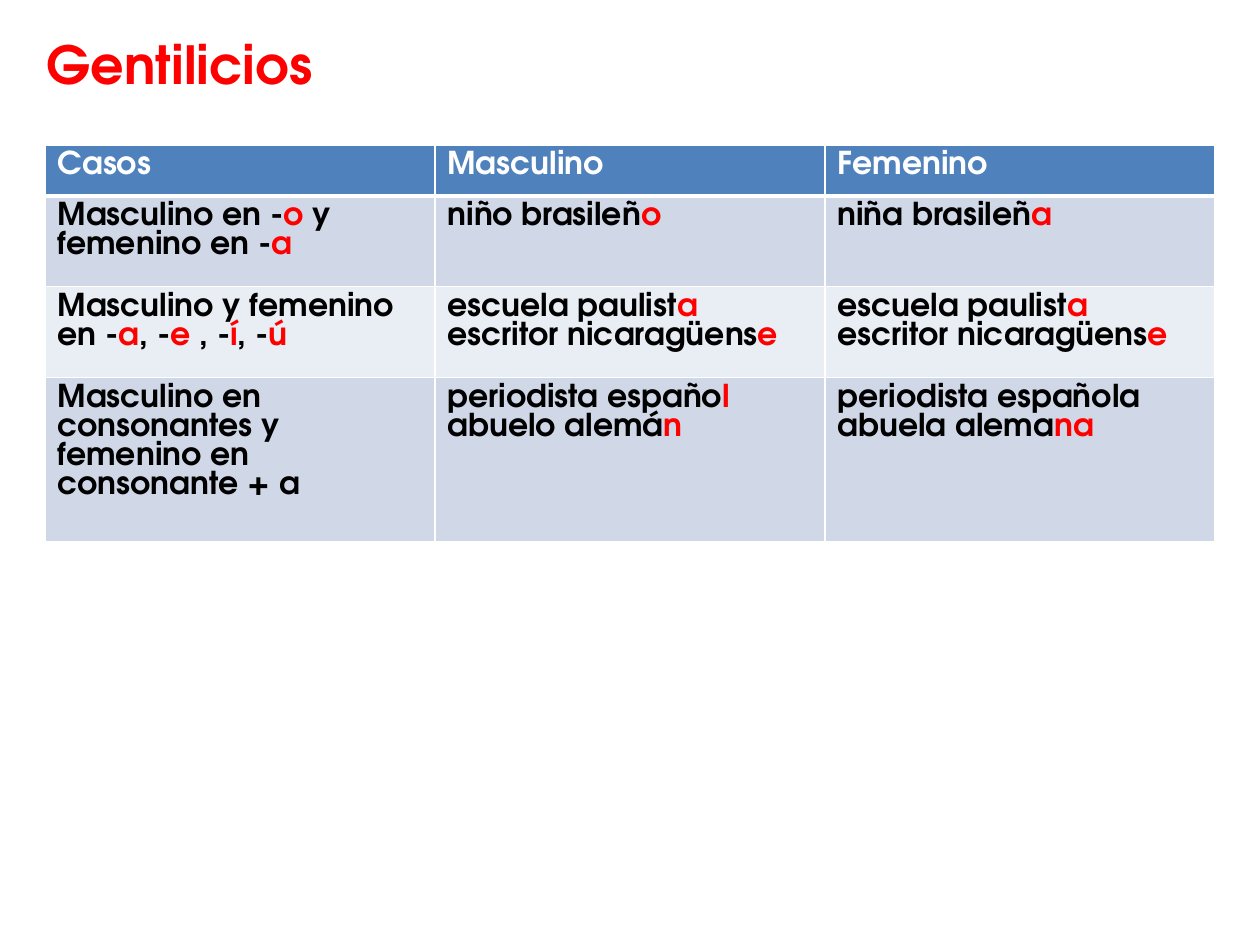
from lxml.etree import SubElement
from pptx import Presentation
from pptx.dml.color import RGBColor
from pptx.enum.text import MSO_AUTO_SIZE
from pptx.oxml.ns import qn
from pptx.util import Cm, Pt

COLORS = {
    "accent": "FF0000",
    "text": "000000",
    "header_text": "FFFFFF",
    "border": "FFFFFF",
    "header": "4F81BD",
    "odd_row": "D0D8E8",
    "even_row": "E9EDF4",
}
FONT = "TeX Gyre Adventor"
TITLE_FORMAT = {"name": FONT, "size": Pt(30), "bold": True}
CELL_FORMAT = {"name": FONT, "size": Pt(18), "bold": True}
ROW_HEIGHTS = [1.02, 1.83, 1.83, 3.29]
COLUMN_WIDTH = 7.86

# Asterisks enclose the highlighted endings; a line break starts a paragraph.
ROWS = [
    ["Casos", "Masculino", "Femenino"],
    ["Masculino en -*o *y femenino en -*a*", "niño brasileñ*o*", "niña brasileñ*a*"],
    ["Masculino y femenino en -*a*, -*e *, -*í*, -*ú*"]
    + ["escuela paulist*a*\nescritor nicaragüens*e*"] * 2,
    ["Masculino en consonantes y femenino en consonante + a",
     "periodista españo*l*\nabuelo alemá*n*",
     "periodista española\nabuela alema*na*"],
]


def color(name):
    return RGBColor.from_string(COLORS[name])


def add_run(paragraph, text, font_format, color_name):
    run = paragraph.add_run()
    run.text = text
    for attribute, value in font_format.items():
        setattr(run.font, attribute, value)
    run.font.color.rgb = color(color_name)


def add_title(slide, text):
    shape = slide.shapes.add_textbox(Cm(0.69), Cm(0.53), Cm(23.8), Cm(1.55))
    frame = shape.text_frame
    frame.word_wrap = True
    frame.auto_size = MSO_AUTO_SIZE.SHAPE_TO_FIT_TEXT
    add_run(frame.paragraphs[0], text, TITLE_FORMAT, "accent")


def set_borders(cell, widths):
    """Draw cell borders; widths maps L, R, T and B to points, in that order."""
    properties = cell._tc.get_or_add_tcPr()
    for side, width in widths.items():
        line = SubElement(properties, qn(f"a:ln{side}"), w=str(Pt(width)))
        fill = SubElement(line, qn("a:solidFill"))
        SubElement(fill, qn("a:srgbClr"), val=COLORS["border"])


def fill_cell(cell, text, fill_name, text_color):
    cell.fill.solid()
    cell.fill.fore_color.rgb = color(fill_name)
    frame = cell.text_frame
    for index, line in enumerate(text.split("\n")):
        paragraph = frame.add_paragraph() if index else frame.paragraphs[0]
        for position, part in enumerate(line.split("*")):
            if part:
                add_run(paragraph, part, CELL_FORMAT,
                        "accent" if position % 2 else text_color)


def add_endings_table(slide):
    columns = len(ROWS[0])
    table = slide.shapes.add_table(
        len(ROWS), columns, Cm(0.91), Cm(2.93),
        Cm(COLUMN_WIDTH * columns), Cm(sum(ROW_HEIGHTS))).table
    for column in table.columns:
        column.width = Cm(COLUMN_WIDTH)
    for index, (texts, height) in enumerate(zip(ROWS, ROW_HEIGHTS)):
        table.rows[index].height = Cm(height)
        if index == 0:
            fill_name, text_color = "header", "header_text"
        else:
            fill_name, text_color = "odd_row" if index % 2 else "even_row", "text"
        widths = {"L": 1, "R": 1, "T": 3 if index == 1 else 1, "B": 1 if index else 3}
        for column, text in enumerate(texts):
            cell = table.cell(index, column)
            set_borders(cell, widths)
            fill_cell(cell, text, fill_name, text_color)


def main():
    presentation = Presentation()
    presentation.slide_width = Cm(25.4)
    presentation.slide_height = Cm(19.05)
    slide = presentation.slides.add_slide(presentation.slide_layouts[6])
    add_title(slide, "Gentilicios")
    add_endings_table(slide)
    presentation.save("out.pptx")


if __name__ == "__main__":
    main()
